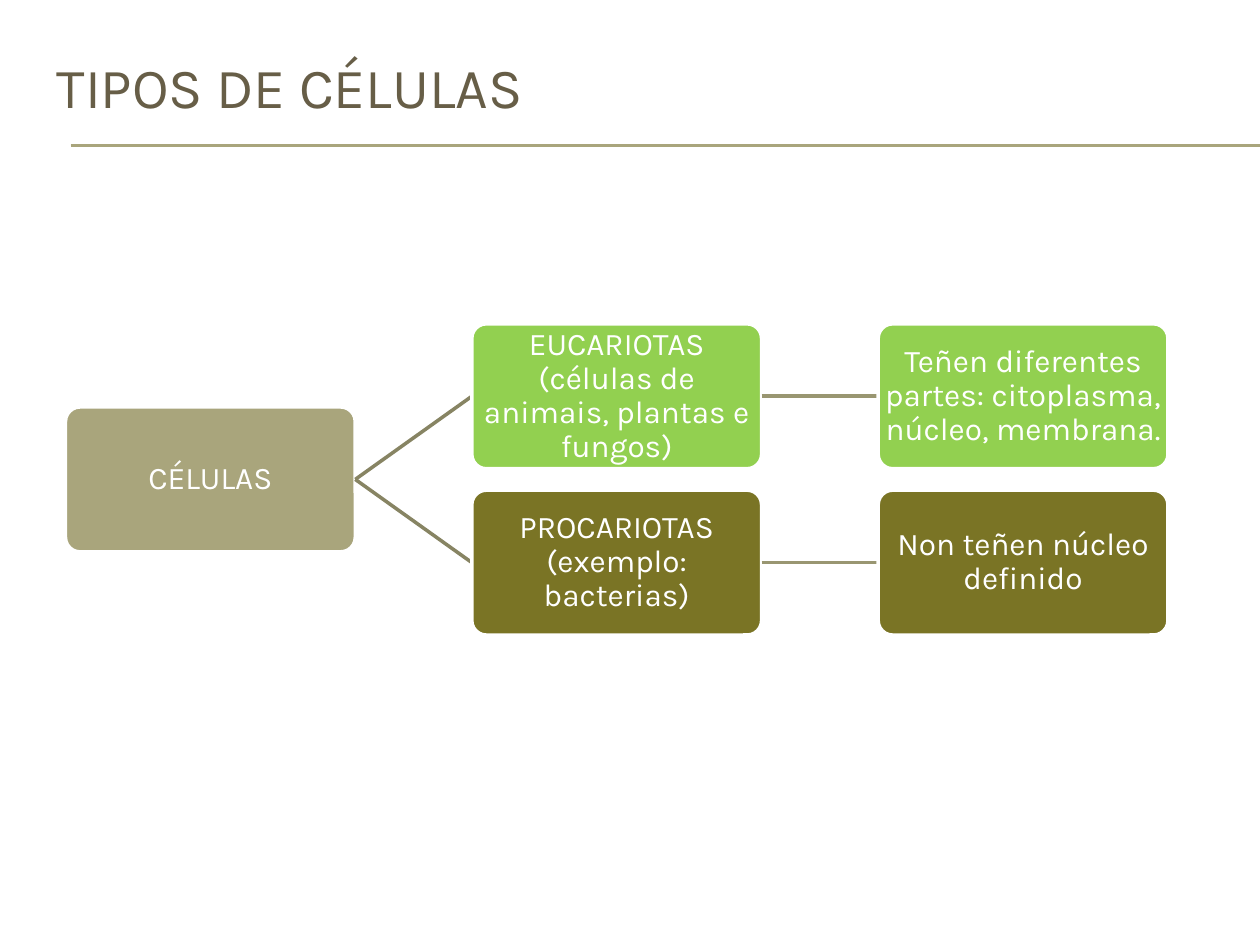
from lxml.etree import SubElement
from pptx import Presentation
from pptx.dml.color import RGBColor
from pptx.enum.shapes import MSO_CONNECTOR, MSO_SHAPE
from pptx.enum.text import MSO_ANCHOR, MSO_AUTO_SIZE, PP_ALIGN
from pptx.oxml.ns import qn
from pptx.util import Inches, Pt

BOX_WIDTH, BOX_HEIGHT = 2.3, 1.15
ROOT_LEFT, COLUMN_STEP = 0.52, 3.225
ROOT_TOP, ROW_OFFSET = 3.23, 0.66
BRANCHES = [
    (-1, "92D050", "EUCARIOTAS (células de animais, plantas e fungos)",
     "Teñen diferentes partes: citoplasma, núcleo, membrana."),
    (1, "7A7425", "PROCARIOTAS (exemplo: bacterias)", "Non teñen núcleo definido"),
]


def color(hex_value):
    return RGBColor.from_string(hex_value)


def apply_format(target, values):
    for name, value in values.items():
        setattr(target, name, value)


def write_text(frame, text, size, hex_value, frame_format, paragraph_format):
    frame.text = text
    apply_format(frame, {"word_wrap": True, "auto_size": MSO_AUTO_SIZE.NONE,
                         "vertical_anchor": MSO_ANCHOR.MIDDLE, **frame_format})
    paragraph = frame.paragraphs[0]
    apply_format(paragraph, paragraph_format)
    font = paragraph.runs[0].font
    apply_format(font, {"name": "Karla", "size": Pt(size), "bold": False})
    font.color.rgb = color(hex_value)


def add_title(slide, text):
    title = slide.shapes.title
    apply_format(title, {"left": Inches(0.35), "top": Inches(0.36),
                         "width": Inches(9.5), "height": Inches(0.65)})
    write_text(title.text_frame, text, 32.4, "675E47", {},
               {"alignment": PP_ALIGN.LEFT})


def add_line(slide, start, end, hex_value, width):
    line = slide.shapes.add_connector(
        MSO_CONNECTOR.STRAIGHT, *(Inches(value) for value in (*start, *end)))
    line.line.color.rgb = color(hex_value)
    line.line.width = Pt(width)
    SubElement(line._element.spPr, qn("a:effectLst"))


def add_box(slide, column, top, text, fill):
    box = slide.shapes.add_shape(
        MSO_SHAPE.ROUNDED_RECTANGLE, Inches(ROOT_LEFT + column * COLUMN_STEP),
        Inches(top), Inches(BOX_WIDTH), Inches(BOX_HEIGHT))
    box.adjustments[0] = 0.1
    box.shadow.inherit = False
    box.fill.solid()
    box.fill.fore_color.rgb = color(fill)
    box.line.color.rgb = color("FFFFFF")
    box.line.width = Pt(2)
    margins = {f"margin_{side}": Inches(0.01)
               for side in ("left", "right", "top", "bottom")}
    write_text(box.text_frame, text, 18, "FFFFFF", margins,
               {"alignment": PP_ALIGN.CENTER, "line_spacing": 0.9})


def add_link(slide, column, start_top, end_top, hex_value):
    right_edge = ROOT_LEFT + column * COLUMN_STEP + BOX_WIDTH
    next_left = ROOT_LEFT + (column + 1) * COLUMN_STEP
    middle = BOX_HEIGHT / 2
    add_line(slide, (right_edge, start_top + middle),
             (next_left, end_top + middle), hex_value, 2)


def main():
    presentation = Presentation()
    presentation.slide_width, presentation.slide_height = Inches(10), Inches(7.5)
    slide = presentation.slides.add_slide(presentation.slide_layouts[5])
    for rule_top in (1.15, 1.16):
        add_line(slide, (0.56, rule_top), (10, rule_top), "A9A57C", 0.75)
    add_title(slide, "TIPOS DE CÉLULAS")
    add_box(slide, 0, ROOT_TOP, "CÉLULAS", "A9A57C")
    for direction, fill, cell_type, feature in BRANCHES:
        top = ROOT_TOP + direction * ROW_OFFSET
        add_link(slide, 0, ROOT_TOP, top, "878463")
        add_box(slide, 1, top, cell_type, fill)
        add_link(slide, 1, top, top, "999671")
        add_box(slide, 2, top, feature, fill)
    presentation.save("out.pptx")


if __name__ == "__main__":
    main()
